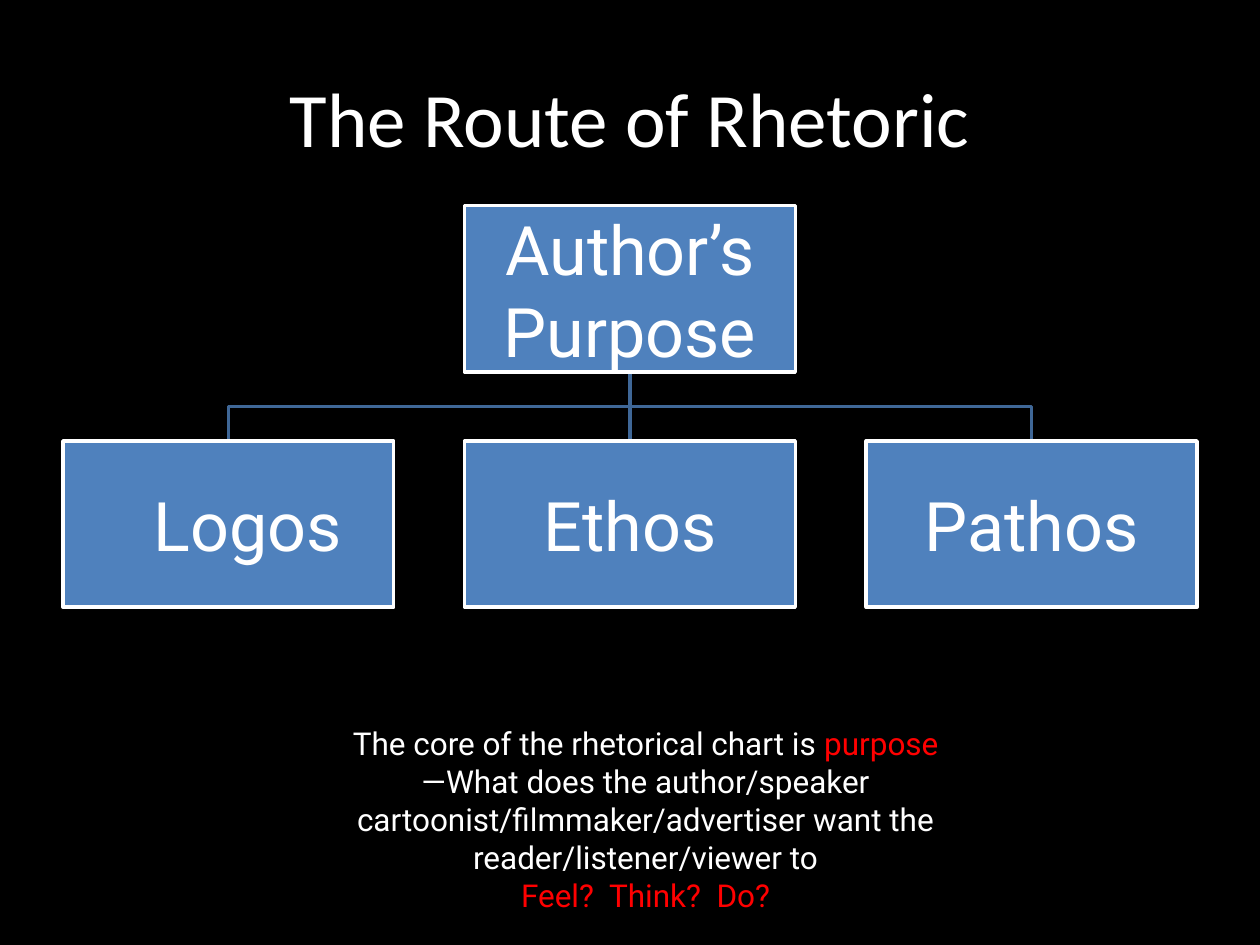
from lxml import etree
from pptx import Presentation
from pptx.dml.color import RGBColor
from pptx.enum.shapes import MSO_CONNECTOR as CONN, MSO_SHAPE as SHAPE
from pptx.enum.text import MSO_ANCHOR as ANCHOR, PP_ALIGN as ALIGN
from pptx.oxml.ns import qn
from pptx.util import Pt

WHITE, RED, BLUE, STEEL = "FFFFFF", "FF0000", "4F81BD", "3F6797"
BOX_W, BOX_H = 189, 95
LEFT, STEP = 36, 229.5
ROOT_TOP, BRANCH_TOP = 117.5, 252
BRANCHES = [("Logos", 22), ("Ethos", 0), ("Pathos", 0)]
NOTE = [
    [("The core of the rhetorical chart is ", WHITE), ("purpose", RED),
     ("—What does the author/speaker", WHITE)],
    [("cartoonist/filmmaker/advertiser want the reader/listener/viewer to", WHITE)],
    [("Feel?  Think?  Do?", RED)],
]


def rgb(color):
    """Turn a hex string into a colour."""
    return RGBColor.from_string(color)


def style_run(r, size, font, color):
    """Set the font of a run."""
    r.font.size = Pt(size)
    r.font.name = font
    r.font.color.rgb = rgb(color)


def style_line(sp, color):
    """Give a shape or connector its 2 pt line."""
    sp.line.color.rgb = rgb(color)
    sp.line.width = Pt(2)


def add_text(s, x, y, w, h, paragraphs, size, font, anchor=ANCHOR.TOP):
    """Add centred, wrapped paragraphs of coloured runs."""
    tf = s.shapes.add_textbox(Pt(x), Pt(y), Pt(w), Pt(h)).text_frame
    tf.word_wrap = True
    tf.vertical_anchor = anchor
    for i, runs in enumerate(paragraphs):
        p = tf.add_paragraph() if i else tf.paragraphs[0]
        p.alignment = ALIGN.CENTER
        for text, color in runs:
            r = p.add_run()
            r.text = text
            style_run(r, size, font, color)


def add_box(s, x, y, text, indent=0):
    """Add a labelled box of the tree."""
    sp = s.shapes.add_shape(SHAPE.RECTANGLE, Pt(x), Pt(y), Pt(BOX_W), Pt(BOX_H))
    sp.shadow.inherit = False
    sp.fill.solid()
    sp.fill.fore_color.rgb = rgb(BLUE)
    style_line(sp, WHITE)
    tf = sp.text_frame
    tf.word_wrap = True
    tf.vertical_anchor = ANCHOR.MIDDLE
    tf.margin_left = Pt(2 + indent)
    tf.margin_right = tf.margin_top = tf.margin_bottom = Pt(2)
    tf.text = text
    p = tf.paragraphs[0]
    p.alignment = ALIGN.CENTER
    style_run(p.runs[0], 39, "Roboto", WHITE)


def add_elbow(s, x1, y1, x2, y2):
    """Draw a bent line that turns halfway down."""
    mid = (y1 + y2) / 2
    fb = s.shapes.build_freeform(Pt(x1), Pt(y1))
    fb.add_line_segments([(Pt(x1), Pt(mid)), (Pt(x2), Pt(mid)), (Pt(x2), Pt(y2))],
                         close=False)
    sp = fb.convert_to_shape()
    sp.shadow.inherit = False
    sp.fill.background()
    style_line(sp, STEEL)


def add_straight(s, x, y1, y2):
    """Draw a vertical connector."""
    cx = s.shapes.add_connector(CONN.STRAIGHT, Pt(x), Pt(y1), Pt(x), Pt(y2))
    style_line(cx, STEEL)
    etree.SubElement(cx._element.spPr, qn("a:effectLst"))


def add_tree(s):
    """Draw the purpose box, its branches and their links."""
    root_x = LEFT + STEP
    center, bottom = root_x + BOX_W / 2, ROOT_TOP + BOX_H
    for side in (1, -1):
        add_elbow(s, center, bottom, center + side * STEP, BRANCH_TOP)
    add_straight(s, center, bottom, BRANCH_TOP)
    add_box(s, root_x, ROOT_TOP, "Author’s Purpose")
    for i, (name, indent) in enumerate(BRANCHES):
        add_box(s, LEFT + i * STEP, BRANCH_TOP, name, indent)


def main():
    """Build and save the slide."""
    prs = Presentation()
    prs.slide_width, prs.slide_height = Pt(720), Pt(540)
    s = prs.slides.add_slide(prs.slide_layouts[6])
    s.background.fill.solid()
    s.background.fill.fore_color.rgb = rgb("000000")
    add_text(s, 36, 21.6, 648, 90, [[("The Route of Rhetoric", WHITE)]],
             44, "Calibri", ANCHOR.MIDDLE)
    add_tree(s)
    add_text(s, 192, 410.4, 354, 116.6, NOTE, 18, "Roboto")
    prs.save("out.pptx")


if __name__ == "__main__":
    main()
